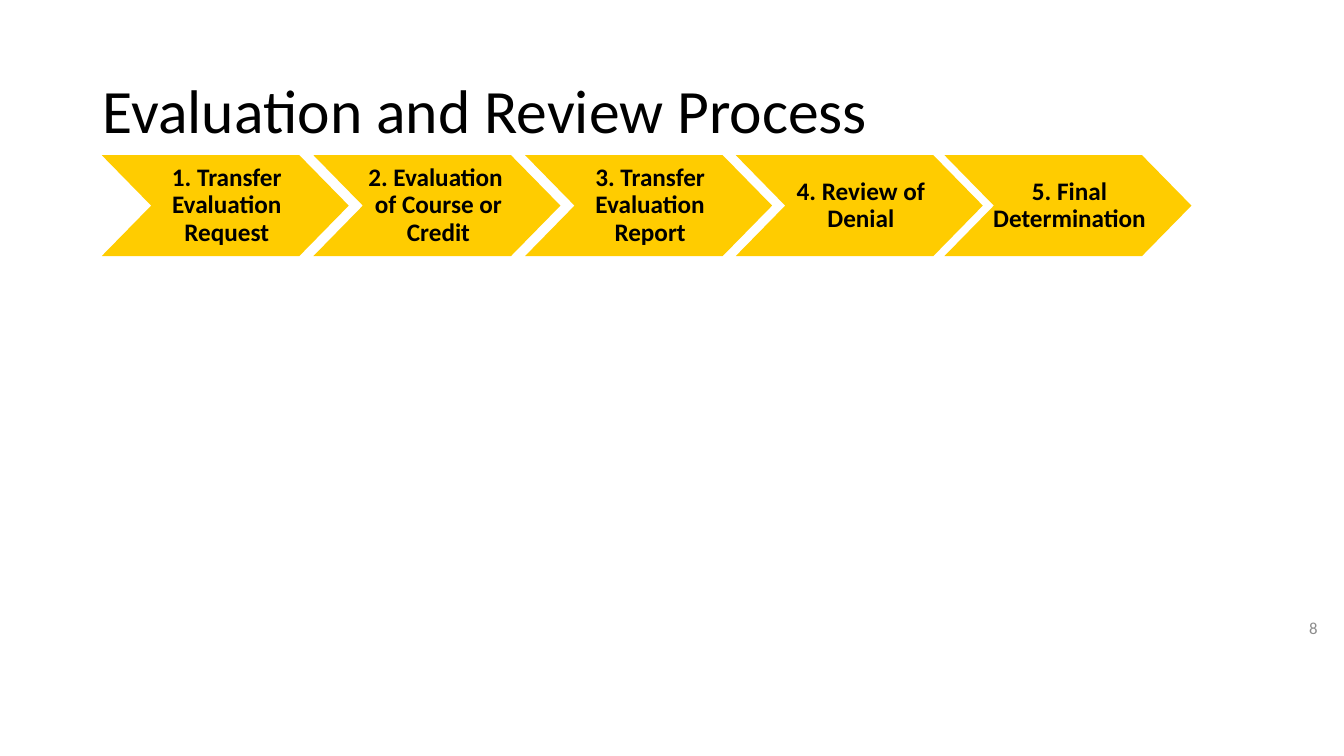
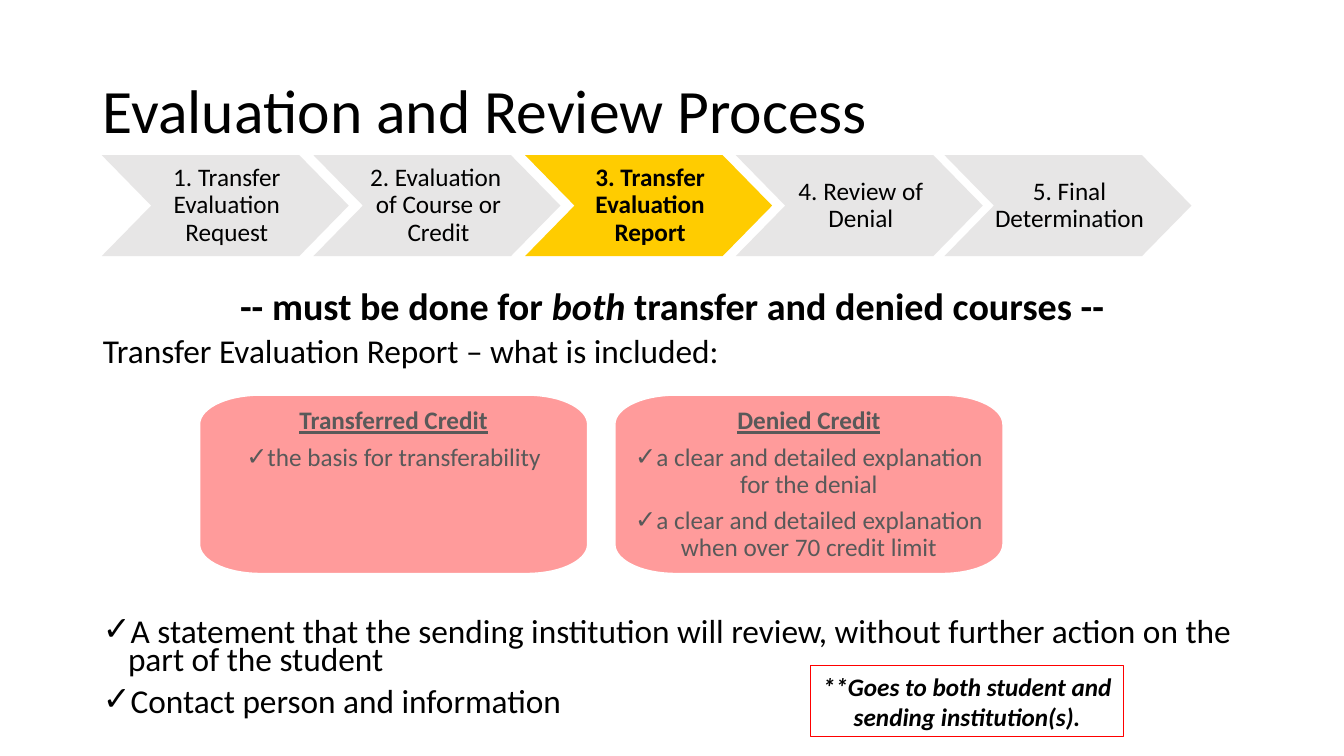
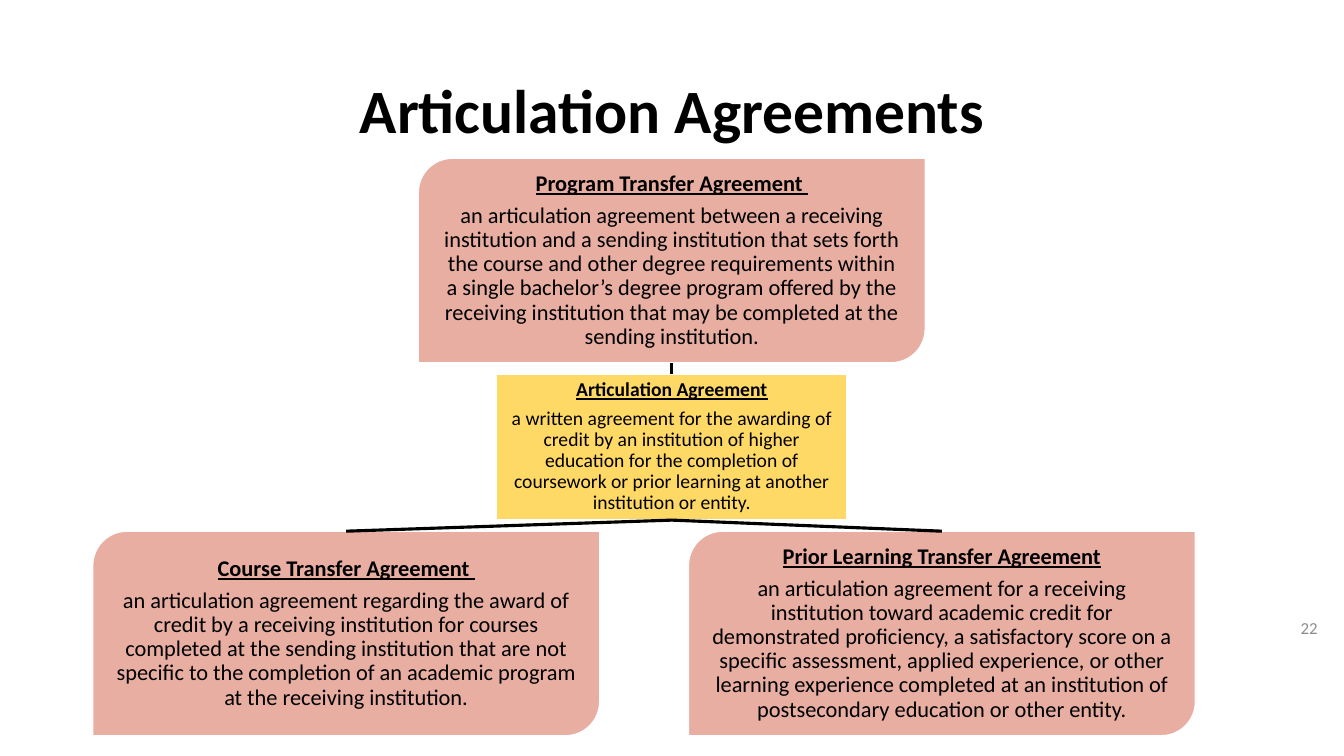
from math import cos, radians, sin

from lxml.etree import SubElement
from pptx import Presentation
from pptx.dml.color import RGBColor
from pptx.enum.shapes import MSO_CONNECTOR, MSO_SHAPE
from pptx.enum.text import MSO_ANCHOR, MSO_AUTO_SIZE, PP_ALIGN
from pptx.oxml.ns import qn
from pptx.util import Inches, Pt

# Shared look
FONT, BULLET_FONT = "Calibri", "Arial"
BLACK, WHITE, GREY_TEXT, NUMBER_GREY = "000000", "FFFFFF", "595959", "8C8C8C"
GOLD, STEP_GREY, PINK, RED = "FFCC00", "E7E6E6", "FF9B9B", "FF0000"
HUB_YELLOW, SALMON = "FFD966", "E8AEA2"
MARGIN, CONTENT_W = 0.92, 11.5
TITLE_ONLY, TITLE_AND_BODY = 5, 1

# Content
PROCESS_TITLE = "Evaluation and Review Process"
STEPS = [
    (1.01, "1. Transfer Evaluation Request"),
    (3.11, "2. Evaluation \vof Course or Credit"),
    (5.21, "3. Transfer Evaluation Report"),
    (7.3, "4. Review of Denial"),
    (9.37, "5. Final Determination"),
]
# Runs with marks, size, space before, alignment, bullet
REPORT = [
    ([("-- must be done for ", "b"), ("both", "bi"),
      (" transfer and denied courses --", "b")], 27.2, 0, PP_ALIGN.CENTER, False),
    ([("Transfer Evaluation Report – what is included:", "")],
     23.8, 10, PP_ALIGN.LEFT, False),
    ([("A statement that the sending institution will review, without further "
       "action on the part of the student", "")], 23.8, 180, PP_ALIGN.LEFT, True),
    ([("Contact person and information", "")], 23.8, 10, PP_ALIGN.LEFT, True),
]
CREDITS = [
    ("Transferred Credit", ["the basis for transferability"]),
    ("Denied Credit", ["a clear and detailed explanation for the denial",
                       "a clear and detailed explanation when over 70 credit limit"]),
]
NOTE = "**Goes to both student and sending institution(s)."
HUB = ("Articulation Agreement",
       "a written agreement for the awarding of credit by an institution of higher "
       "education for the completion of coursework or prior learning at another "
       "institution or entity.")
AGREEMENTS = [
    (4.15, 1.57, "Program Transfer Agreement ",
     "an articulation agreement between a receiving institution and a sending "
     "institution that sets forth the course and other degree requirements within a "
     "single bachelor’s degree program offered by the receiving institution that may "
     "be completed at the sending institution."),
    (6.83, 5.27, "Prior Learning Transfer Agreement",
     "an articulation agreement for a receiving institution toward academic credit "
     "for demonstrated proficiency, a satisfactory score on a specific assessment, "
     "applied experience, or other learning experience completed at an institution "
     "of postsecondary education or other entity."),
    (0.92, 5.27, "Course Transfer Agreement ",
     "an articulation agreement regarding the award of credit by a receiving "
     "institution for courses completed at the sending institution that are not "
     "specific to the completion of an academic program at the receiving institution."),
]


# Formatting helpers
def rgb(value):
    return RGBColor.from_string(value)


def style(r, size, color=BLACK, marks=""):
    f = r.font
    f.name, f.size, f.color.rgb = FONT, Pt(size), rgb(color)
    f.bold, f.italic, f.underline = "b" in marks, "i" in marks, "u" in marks


def place(sp, left, top, width, height):
    sp.left, sp.top = Inches(left), Inches(top)
    sp.width, sp.height = Inches(width), Inches(height)


def bullet(p, indent=0.0, char="✓"):
    pPr = p._p.get_or_add_pPr()
    pPr.set("marL", str(Inches(indent)))
    pPr.set("indent", str(-Inches(indent)))
    if char:
        SubElement(pPr, qn("a:buFont")).set("typeface", BULLET_FONT)
        SubElement(pPr, qn("a:buChar")).set("char", char)
    else:
        SubElement(pPr, qn("a:buNone"))


def paint(sp, fill=None, line=None, width=1):
    sp.shadow.inherit = False
    if fill:
        sp.fill.solid()
        sp.fill.fore_color.rgb = rgb(fill)
    else:
        sp.fill.background()
    if line:
        sp.line.color.rgb = rgb(line)
        sp.line.width = Pt(width)
    else:
        sp.line.fill.background()


def write(sp, paragraphs, size, color=BLACK, insets=(0.1, 0.05, 0.1, 0.05),
          anchor=MSO_ANCHOR.MIDDLE, spacing=0.9, after=0.35):
    """Centred paragraphs, each given as text, marks and whether it is bulleted."""
    tf = sp.text_frame
    tf.word_wrap, tf.vertical_anchor = True, anchor
    tf.margin_left, tf.margin_top, tf.margin_right, tf.margin_bottom = map(Inches, insets)
    for i, (text, marks, bulleted) in enumerate(paragraphs):
        p = tf.add_paragraph() if i else tf.paragraphs[0]
        p.text = text
        if bulleted:
            bullet(p)
        p.alignment, p.line_spacing = PP_ALIGN.CENTER, spacing
        p.space_after = Pt(round(size * after, 1))
        for r in p.runs:
            style(r, size, color, marks)


def outline(slide, points):
    first, *rest = [(Inches(x), Inches(y)) for x, y in points]
    builder = slide.shapes.build_freeform(*first)
    builder.add_line_segments(rest, close=True)
    return builder.convert_to_shape()


# Parts the slides share
def add_slide(prs, layout, title, align=PP_ALIGN.LEFT, marks="", number=None):
    slide = prs.slides.add_slide(prs.slide_layouts[layout])
    sp = slide.shapes.title
    place(sp, MARGIN, 0.4, CONTENT_W, 1.45)
    tf = sp.text_frame
    tf.text = title
    tf.auto_size, tf.vertical_anchor = MSO_AUTO_SIZE.NONE, MSO_ANCHOR.MIDDLE
    p = tf.paragraphs[0]
    p.alignment, p.line_spacing = align, 0.9
    style(p.runs[0], 44, BLACK, marks)
    if number:
        box = slide.shapes.add_textbox(*map(Inches, (12.74, 6.03, 0.43, 0.4)))
        write(box, [(number, "", False)], 12, NUMBER_GREY, spacing=1, after=0)
        box.text_frame.paragraphs[0].alignment = PP_ALIGN.RIGHT
    return slide


def add_steps(slide, active):
    top, width, height, tip = 1.54, 2.45, 1, 0.49
    for i, (left, text) in enumerate(STEPS):
        right, middle, bottom = left + width, top + height / 2, top + height
        sp = outline(slide, [(left, top), (right - tip, top), (right, middle),
                             (right - tip, bottom), (left, bottom), (left + tip, middle)])
        on = i in active
        paint(sp, GOLD if on else STEP_GREY)
        write(sp, [(text, "b" if on else "", False)], 18, insets=(0.41, 0.02, 0.38, 0.02))


# Slide parts
def add_report(slide):
    body = slide.placeholders[1]
    place(body, MARGIN, 2.88, CONTENT_W, 4.6)
    tf = body.text_frame
    tf.auto_size, tf.vertical_anchor = MSO_AUTO_SIZE.NONE, MSO_ANCHOR.TOP
    for i, (runs, size, before, align, bulleted) in enumerate(REPORT):
        p = tf.add_paragraph() if i else tf.paragraphs[0]
        if bulleted:
            bullet(p, 0.25)
        else:
            bullet(p, char=None)
        p.alignment, p.line_spacing, p.space_before = align, 0.7, Pt(before)
        for text, marks in runs:
            r = p.add_run()
            r.text = text
            style(r, size, BLACK, marks)


def add_credit_boxes(slide):
    top, width, height, gap = 3.92, 3.85, 1.77, 0.27
    rx, ry = 0.6, 0.29
    for i, (heading, items) in enumerate(CREDITS):
        left = 1.98 + i * (width + gap)
        right, bottom = left + width, top + height
        # Elliptical corners, clockwise from the top left
        corners = [(left + rx, top + ry, 180), (right - rx, top + ry, 270),
                   (right - rx, bottom - ry, 0), (left + rx, bottom - ry, 90)]
        sp = outline(slide, [(x + rx * cos(radians(a)), y + ry * sin(radians(a)))
                             for x, y, start in corners
                             for a in range(start, start + 91, 6)])
        paint(sp, PINK, WHITE)
        write(sp, [(heading, "bu", False)] + [(item, "", True) for item in items],
              18, GREY_TEXT, (0.13,) * 4, MSO_ANCHOR.TOP)


def add_note(slide):
    sp = slide.shapes.add_shape(MSO_SHAPE.RECTANGLE, *map(Inches, (8.04, 6.6, 3.11, 0.71)))
    paint(sp, line=RED, width=0.75)
    write(sp, [(NOTE, "bi", False)], 18, spacing=1, after=0)


def add_agreement(slide, shape, at, texts, fill, size, inset):
    sp = slide.shapes.add_shape(shape, *map(Inches, at))
    paint(sp, fill, WHITE)
    heading, text = texts
    write(sp, [(heading, "bu", False), (text, "", False)], size, insets=(inset,) * 4)


def add_agreements(slide):
    width, height = 5.03, 2.03
    # The hub is centred under the first agreement
    hub_x = AGREEMENTS[0][0] + width / 2
    hub_top, hub_w, hub_h = 3.71, 3.48, 1.45
    add_agreement(slide, MSO_SHAPE.RECTANGLE, (hub_x - hub_w / 2, hub_top, hub_w, hub_h),
                  HUB, HUB_YELLOW, 14, 0.11)
    for left, top, *texts in AGREEMENTS:
        add_agreement(slide, MSO_SHAPE.ROUND_2_DIAG_RECTANGLE,
                      (left, top, width, height), texts, SALMON, 16, 0.13)
    # Links from the hub to each agreement
    for left, top, *_ in AGREEMENTS:
        above = top < hub_top
        ends = (hub_x, hub_top if above else hub_top + hub_h,
                left + width / 2, top + height if above else top)
        line = slide.shapes.add_connector(MSO_CONNECTOR.STRAIGHT, *map(Inches, ends))
        line.line.color.rgb, line.line.width = rgb(BLACK), Pt(2.25)
        SubElement(line._element.spPr, qn("a:effectLst"))


def main():
    prs = Presentation()
    prs.slide_width, prs.slide_height = Inches(40 / 3), Inches(7.5)

    overview = add_slide(prs, TITLE_ONLY, PROCESS_TITLE, number="8")
    add_steps(overview, active=range(len(STEPS)))

    report = add_slide(prs, TITLE_AND_BODY, PROCESS_TITLE)
    add_report(report)
    add_note(report)
    add_credit_boxes(report)
    add_steps(report, active=[2])

    agreements = add_slide(prs, TITLE_ONLY, "Articulation Agreements",
                           PP_ALIGN.CENTER, "b", number="22")
    add_agreements(agreements)

    prs.save("out.pptx")


if __name__ == "__main__":
    main()
